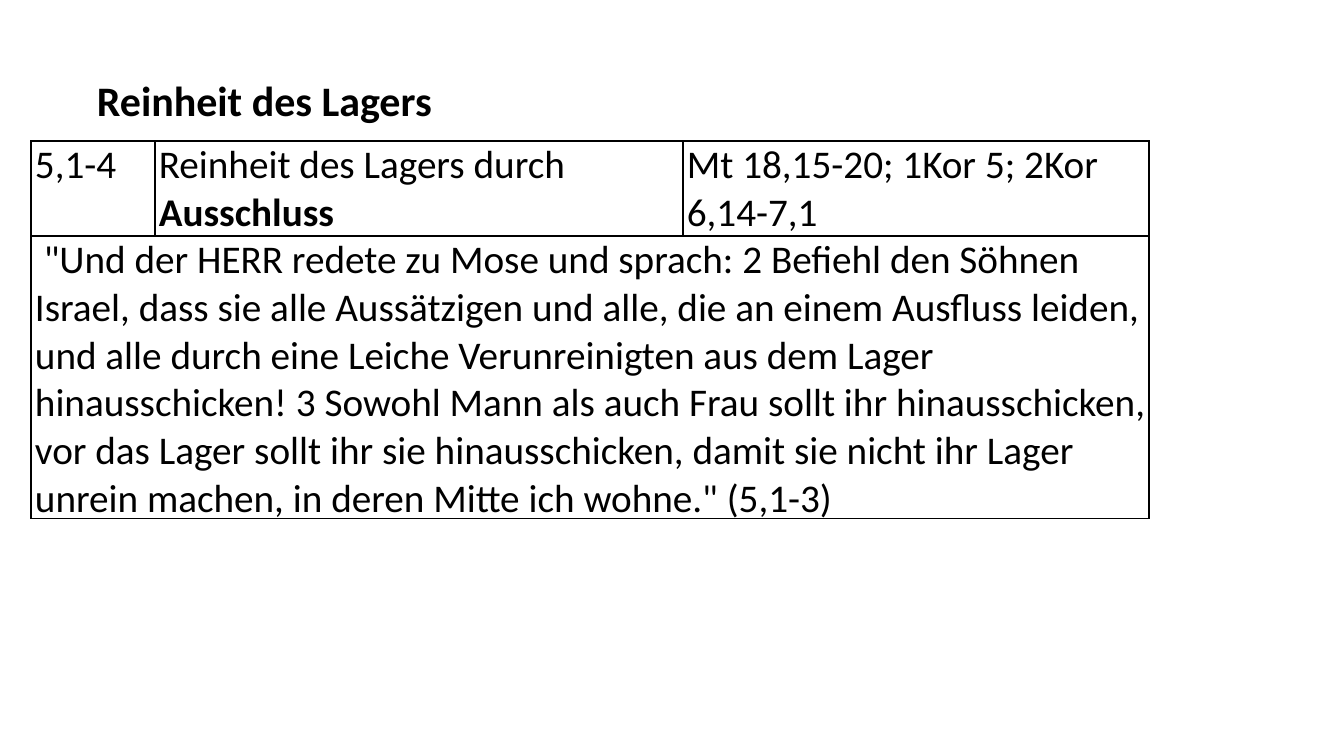
from lxml import etree
from pptx import Presentation, util as u
from pptx.dml.color import RGBColor
from pptx.enum import text
from pptx.oxml.ns import qn

BLACK = RGBColor(0, 0, 0)
WHITE = RGBColor(255, 255, 255)
FONT = "Calibri"

TITLE = "Reinheit des Lagers"
ROWS = [
    [
        [("5,1-4", False)],
        [("Reinheit des Lagers durch ", False), ("Ausschluss", True)],
        [("Mt 18,15-20; 1Kor 5; 2Kor 6,14-7,1", False)],
    ],
    [
        [(
            " \"Und der HERR redete zu Mose und sprach: 2 Befiehl den Söhnen Israel, "
            "dass sie alle Aussätzigen und alle, die an einem Ausfluss leiden, "
            "und alle durch eine Leiche Verunreinigten aus dem Lager hinausschicken! "
            "3 Sowohl Mann als auch Frau sollt ihr hinausschicken, "
            "vor das Lager sollt ihr sie hinausschicken, damit sie nicht ihr Lager "
            "unrein machen, in deren Mitte ich wohne.\" (5,1-3)",
            False,
        )],
    ],
]
TITLE_BOX = (87, 66, 600, 62)
TABLE_AT = (31, 141)
COLS = (124, 528, 466)
HEIGHTS = (95, 281)
MARGINS = {"margin_left": 4, "margin_right": 3, "margin_top": 0, "margin_bottom": 0}


def px(n):
    return u.Emu(round(n * 914400 / 100.8))


def add_run(p, words, size, bold):
    r = p.add_run()
    r.text = words
    for key, value in {"name": FONT, "size": u.Pt(size), "bold": bold}.items():
        setattr(r.font, key, value)
    r.font.color.rgb = BLACK


def add_borders(cell):
    tcPr = cell._tc.get_or_add_tcPr()
    for i, side in enumerate(("lnL", "lnR", "lnT", "lnB")):
        ln = etree.Element(qn("a:" + side), w=str(u.Pt(1)))
        fill = etree.SubElement(ln, qn("a:solidFill"))
        etree.SubElement(fill, qn("a:srgbClr"), val=str(BLACK))
        tcPr.insert(i, ln)


def add_title(s):
    tf = s.shapes.add_textbox(*map(px, TITLE_BOX)).text_frame
    tf.word_wrap = True
    tf.auto_size = text.MSO_AUTO_SIZE.SHAPE_TO_FIT_TEXT
    p = tf.paragraphs[0]
    p.line_spacing = 1.07
    add_run(p, TITLE, 30, True)


def add_passages(s):
    size = (sum(COLS), sum(HEIGHTS))
    frame = s.shapes.add_table(len(ROWS), len(COLS), *map(px, TABLE_AT + size))
    table = frame.table
    table.first_row = table.horz_banding = False
    for col, width in zip(table.columns, COLS):
        col.width = px(width)
    for row, height in zip(table.rows, HEIGHTS):
        row.height = px(height)
    table.cell(1, 0).merge(table.cell(1, len(COLS) - 1))
    for cell in table.iter_cells():
        for key, value in MARGINS.items():
            setattr(cell, key, px(value))
        cell.fill.solid()
        cell.fill.fore_color.rgb = WHITE
        add_borders(cell)
    for i, row in enumerate(ROWS):
        for j, runs in enumerate(row):
            p = table.cell(i, j).text_frame.paragraphs[0]
            for words, bold in runs:
                add_run(p, words, 28, bold)


def main():
    prs = Presentation()
    prs.slide_width, prs.slide_height = px(1344), px(756)
    s = prs.slides.add_slide(prs.slide_layouts[6])
    add_title(s)
    add_passages(s)
    prs.save("out.pptx")


if __name__ == "__main__":
    main()
